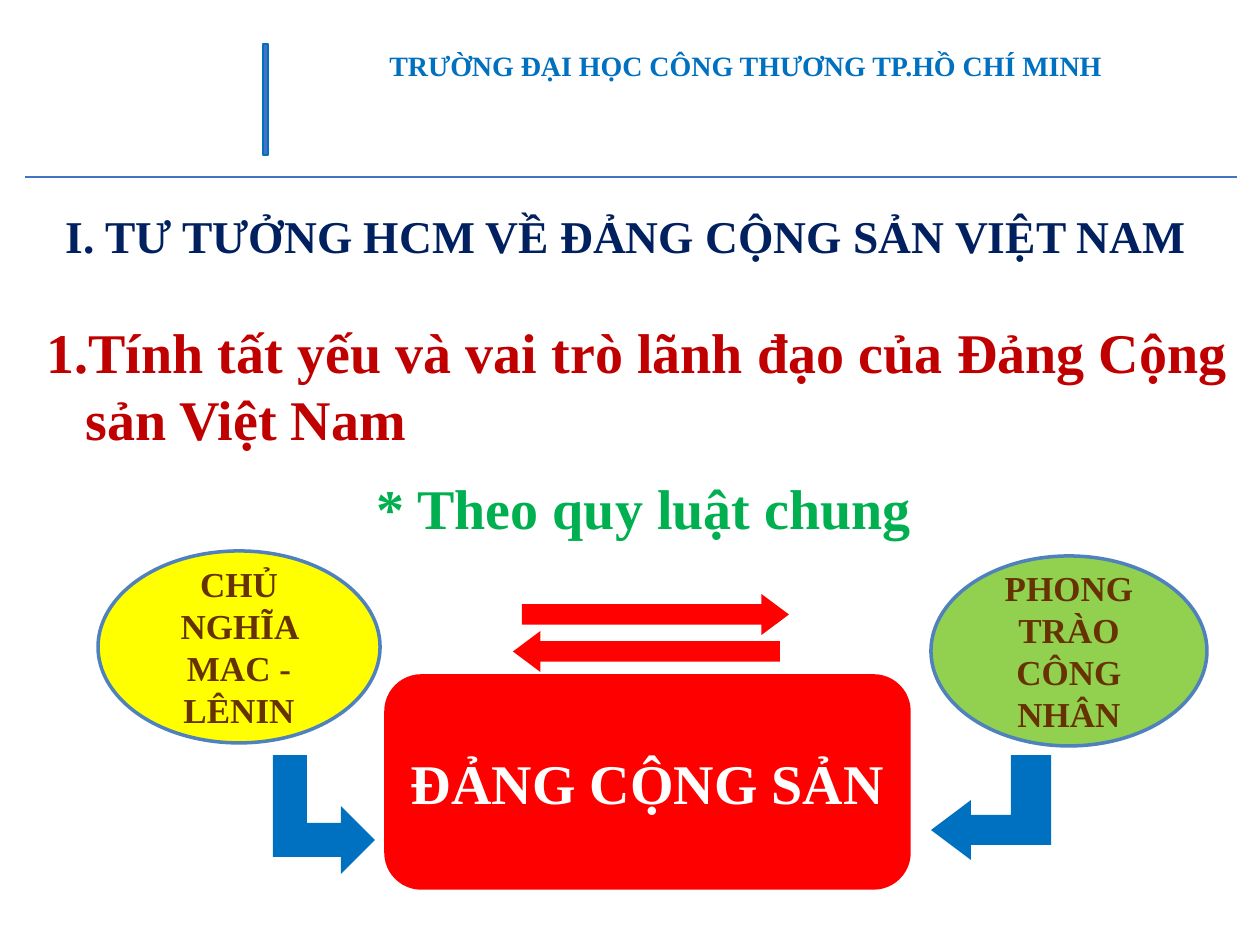
from lxml.etree import SubElement
from pptx import Presentation
from pptx.dml.color import RGBColor
from pptx.enum.shapes import MSO_CONNECTOR, MSO_SHAPE
from pptx.enum.text import MSO_ANCHOR, PP_ALIGN
from pptx.oxml.ns import qn
from pptx.util import Pt

SCALE = 914400 / 126
FONT = "Times New Roman"
COLORS = {
    "navy": "002060", "crimson": "C00000", "green": "00B050", "blue": "0070C0",
    "red": "FF0000", "arrow": "FF0101", "yellow": "FFFF00", "lime": "92D050",
    "outline": "4F81BD", "rule": "4472C4", "brown": "663300", "white": "FFFFFF",
}
ELBOW = [(0, 0), (1, -2), (1, -1), (2, -1), (2, -5), (3, -5), (3, 1), (1, 1), (1, 2)]


def px(n):
    return round(n * SCALE)


def rgb(name):
    return RGBColor.from_string(COLORS[name])


def set_text(sp, text, size, color, align, anchor):
    tf = sp.text_frame
    tf.text = text
    tf.vertical_anchor = anchor
    p = tf.paragraphs[0]
    p.alignment = align
    font = p.runs[0].font
    font.name, font.size, font.bold = FONT, Pt(size), True
    font.color.rgb = rgb(color)
    return tf


def add_label(s, box, text, size, color, align=PP_ALIGN.CENTER, wrap=True,
              anchor=MSO_ANCHOR.TOP):
    sp = s.shapes.add_textbox(*map(px, box))
    tf = set_text(sp, text, size, color, align, anchor)
    tf.word_wrap = wrap
    return tf


def paint(sp, fill, line=None, width=2):
    sp.shadow.inherit = False
    sp.fill.solid()
    sp.fill.fore_color.rgb = rgb(fill)
    if line:
        sp.line.color.rgb = rgb(line)
        sp.line.width = Pt(width)
    else:
        sp.line.fill.background()


def add_block(s, kind, box, fill, line=None, width=2):
    sp = s.shapes.add_shape(kind, *map(px, box))
    paint(sp, fill, line, width)
    return sp


def add_node(s, kind, box, fill, line, text, size, color):
    sp = add_block(s, kind, box, fill, line)
    set_text(sp, text, size, color, PP_ALIGN.CENTER, MSO_ANCHOR.MIDDLE)


def add_arrow(s, kind, box):
    sp = add_block(s, kind, box, "arrow")
    sp.adjustments[0] = 0.5
    sp.adjustments[1] = 0.67


def add_elbow(s, tip, unit):
    """Draw a bent arrow from its tip and the size of one grid unit."""
    points = [(tip[0] + i * unit[0], tip[1] + j * unit[1]) for i, j in ELBOW]
    fb = s.shapes.build_freeform(*points[0], scale=SCALE)
    fb.add_line_segments(points[1:], close=True)
    paint(fb.convert_to_shape(), "blue")


def add_rule(s, x1, x2, y):
    line = s.shapes.add_connector(MSO_CONNECTOR.STRAIGHT, px(x1), px(y), px(x2), px(y))
    line.line.color.rgb = rgb("rule")
    line.line.width = Pt(1.5)
    SubElement(line._element.spPr, qn("a:effectLst"))


def add_header(s):
    add_rule(s, 25, 1237, 177)
    add_block(s, MSO_SHAPE.RECTANGLE, (263, 44, 5, 111), "rule", "blue", 1)
    tf = add_label(s, (267, 13, 964, 145), "TRƯỜNG ĐẠI HỌC CÔNG THƯƠNG TP.HỒ CHÍ MINH",
                   16, "blue", anchor=MSO_ANCHOR.MIDDLE)
    tf.margin_bottom = px(46)
    tf.margin_right = px(19)


def add_headings(s):
    add_label(s, (9, 202, 1235, 68), "I. TƯ TƯỞNG HCM VỀ ĐẢNG CỘNG SẢN VIỆT NAM", 26, "navy")
    tf = add_label(s, (23, 311, 1218, 149),
                   "1.Tính tất yếu và vai trò lãnh đạo của Đảng Cộng sản Việt Nam",
                   32, "crimson", PP_ALIGN.JUSTIFY)
    pPr = tf.paragraphs[0]._p.get_or_add_pPr()
    pPr.set("marL", str(px(50)))
    pPr.set("indent", str(-px(39)))
    add_label(s, (364, 467, 564, 81), "* Theo quy luật chung", 32, "green",
              PP_ALIGN.LEFT, wrap=False)


def add_diagram(s):
    add_node(s, MSO_SHAPE.OVAL, (98, 551, 282, 192), "yellow", "outline",
             "CHỦ NGHĨA MAC - LÊNIN", 20, "brown")
    add_node(s, MSO_SHAPE.OVAL, (931, 556, 276, 190), "lime", "outline",
             "PHONG TRÀO CÔNG NHÂN", 20, "brown")
    add_arrow(s, MSO_SHAPE.RIGHT_ARROW, (522, 594, 267, 41))
    add_arrow(s, MSO_SHAPE.LEFT_ARROW, (513, 631, 267, 41))
    add_node(s, MSO_SHAPE.ROUNDED_RECTANGLE, (386, 676, 523, 212), "red", "red",
             "ĐẢNG CỘNG SẢN", 32, "white")
    add_elbow(s, (375, 840), (-34, 17))
    add_elbow(s, (931, 830), (40, 15))


def main():
    prs = Presentation()
    prs.slide_width, prs.slide_height = px(1260), px(945)
    s = prs.slides.add_slide(prs.slide_layouts[6])
    add_header(s)
    add_headings(s)
    add_diagram(s)
    prs.save("out.pptx")


if __name__ == "__main__":
    main()
